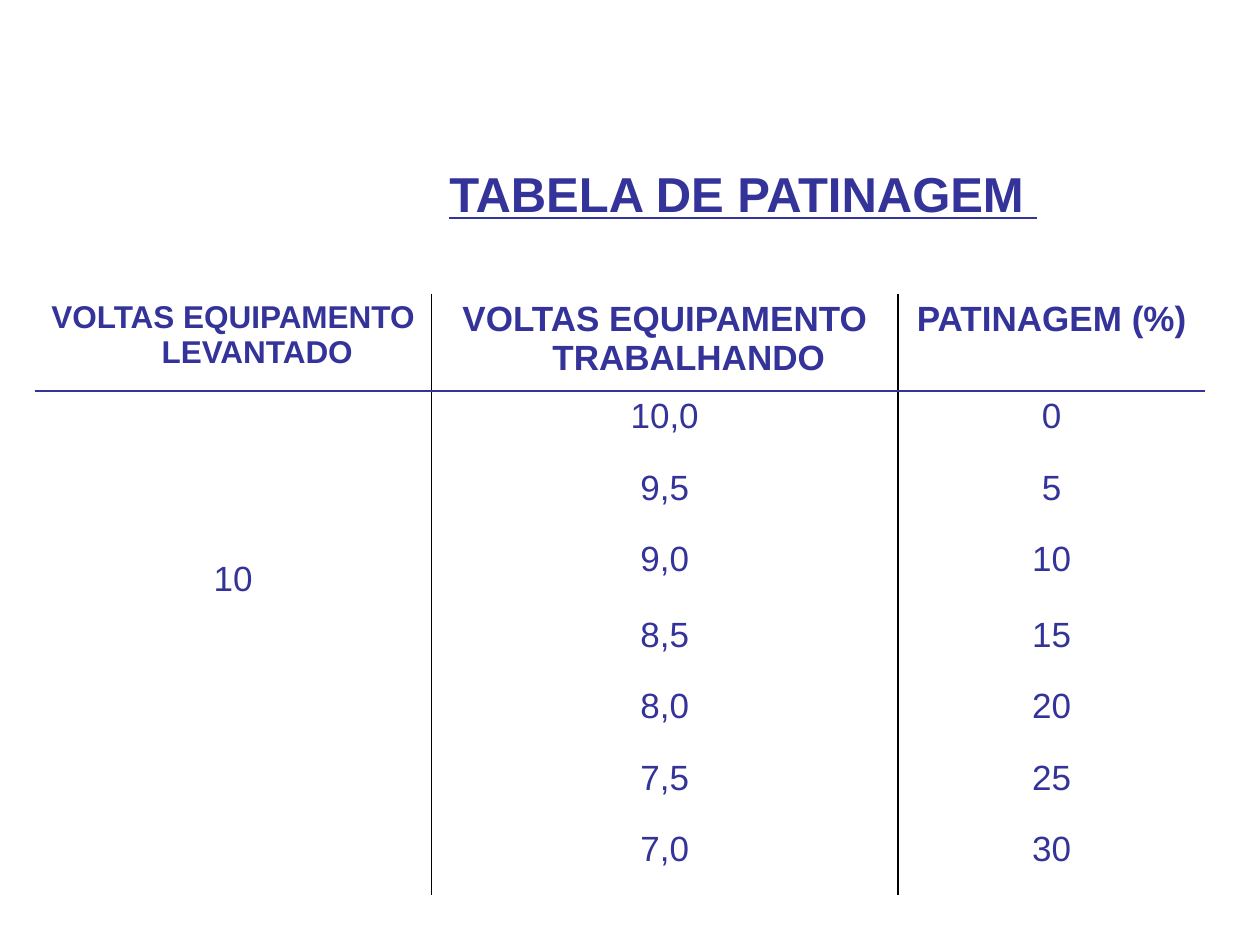
"""Build the wheel slip table slide."""
from lxml.etree import SubElement
from pptx import Presentation
from pptx.dml.color import RGBColor
from pptx.enum.text import PP_ALIGN
from pptx.oxml.ns import qn
from pptx.util import Cm, Pt

NAVY = RGBColor(0x33, 0x33, 0x99)
BLACK = RGBColor(0, 0, 0)
WHITE = RGBColor(0xFF, 0xFF, 0xFF)


def write(p, text, **fmt):
    p.alignment = PP_ALIGN.CENTER
    r = p.add_run()
    r.text = text
    r.font.color.rgb = NAVY
    for name, value in {"name": "Arial", "size": Pt(20), **fmt}.items():
        setattr(r.font, name, value)


def border(cell, side, color):
    ln = SubElement(cell._tc.get_or_add_tcPr(), qn(f"a:ln{side}"), w=str(Pt(1)))
    if color is None:
        SubElement(ln, qn("a:noFill"))
    else:
        fill = SubElement(ln, qn("a:solidFill"))
        SubElement(fill, qn("a:srgbClr"), val=str(color))


prs = Presentation()
prs.slide_width, prs.slide_height = Cm(25.4), Cm(19.05)
s = prs.slides.add_slide(prs.slide_layouts[6])

tf = s.shapes.add_textbox(Cm(6.78), Cm(3.18), Cm(16.41), Cm(1.45)).text_frame
tf.word_wrap = True
write(tf.paragraphs[0], "TABELA DE PATINAGEM ", size=Pt(28), bold=True, underline=True)

rows = [
    ("VOLTAS EQUIPAMENTO LEVANTADO", "VOLTAS EQUIPAMENTO TRABALHANDO", "PATINAGEM (%)"),
    ("", "10,0", "0"),
    ("", "9,5", "5"),
    ("10", "9,0", "10"),
    ("", "8,5", "15"),
    ("", "8,0", "20"),
    ("", "7,5", "25"),
    ("", "7,0", "30"),
]
widths = [8, 9.4, 6.2]
heights = [1.96, 1.44, 1.44, 1.52] + [1.44] * 4

tbl = s.shapes.add_table(
    len(rows), len(widths), Cm(0.7), Cm(5.92), Cm(sum(widths)), Cm(sum(heights))
).table
for name in ("first_row", "horz_banding"):
    setattr(tbl, name, False)
for col, width in zip(tbl.columns, widths):
    col.width = Cm(width)
for row, height in zip(tbl.rows, heights):
    row.height = Cm(height)

for i, texts in enumerate(rows):
    for j, text in enumerate(texts):
        cell = tbl.cell(i, j)
        lines = {
            "L": BLACK if j > 0 else None,
            "R": BLACK if j < 2 else None,
            "T": NAVY if i == 1 else None,
            "B": NAVY if i == 0 else None,
        }
        for side, color in lines.items():
            border(cell, side, color)
        cell.fill.solid()
        cell.fill.fore_color.rgb = WHITE
        if not text:
            continue
        p = cell.text_frame.paragraphs[0]
        pPr = p._p.get_or_add_pPr()
        pPr.set("marL", str(Cm(0.97)))
        pPr.set("indent", str(Cm(-0.97)))
        if i and j == 0:
            p.line_spacing = 1.5
        write(p, text, size=Pt(18 if i == j == 0 else 20), bold=i == 0)

prs.save("out.pptx")
